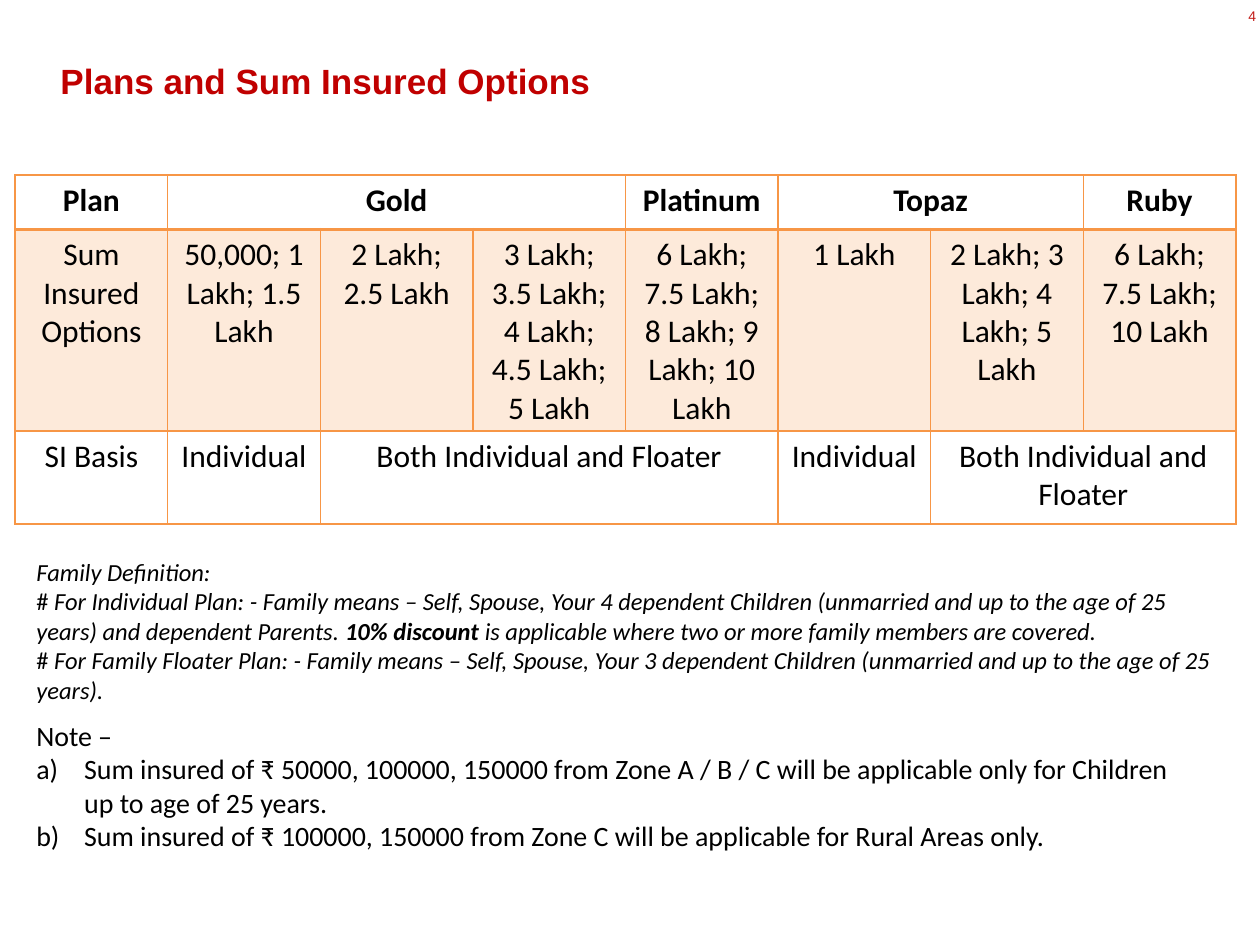
import pptx
import pptx.util
import pptx.dml.color
import pptx.enum.text
import pptx.oxml
import pptx.oxml.ns
from pptx.util import Inches

TITLE = "Plans and Sum Insured Options"
PAGE = "4"
PLANS = [
    [("Plan", 1), ("Gold", 3), ("Platinum", 1), ("Topaz", 2), ("Ruby", 1)],
    [("Sum Insured Options", 1), ("50,000; 1 Lakh; 1.5 Lakh", 1),
     ("2 Lakh; 2.5 Lakh", 1), ("3 Lakh; 3.5 Lakh; 4 Lakh; 4.5 Lakh; 5 Lakh", 1),
     ("6 Lakh; 7.5 Lakh; 8 Lakh; 9 Lakh; 10 Lakh", 1), ("1 Lakh", 1),
     ("2 Lakh; 3 Lakh; 4 Lakh; 5 Lakh", 1), ("6 Lakh; 7.5 Lakh; 10 Lakh", 1)],
    [("SI Basis", 1), ("Individual", 1), ("Both Individual and Floater", 3),
     ("Individual", 1), ("Both Individual and Floater", 2)],
]
ROW_HEIGHTS = [0.43, 1.6, 0.74]
COLUMNS = 8
FAMILY = [
    [("Family Definition:", "i")],
    [("# ", ""),
     ("For Individual Plan: - Family means – Self, Spouse, Your 4 dependent Children "
      "(unmarried and up to the age of 25 years) and dependent Parents. ", "i"),
     ("10% discount ", "bi"),
     ("is applicable where two or more family members are covered.", "i")],
    [("# ", ""),
     ("For Family Floater Plan: - Family means – Self, Spouse, Your 3 dependent Children "
      "(unmarried and up to the age of 25 years).", "i")],
]
NOTE_HEADING = "Note –"
NOTES = [
    "Sum insured of ₹ 50000, 100000, 150000 from Zone A / B / C will be applicable "
    "only for Children up to age of 25 years.",
    "Sum insured of ₹ 100000, 150000 from Zone C will be applicable for Rural Areas only.",
]
THEME = {
    "head_font": "Arial", "body_font": "Calibri",
    "title": "C00000", "page": "C21B17", "text": "000000",
    "border": "F79646", "band": "FDEADA",
    "title_size": 20, "page_size": 8, "table_size": 18, "family_size": 14, "note_size": 16,
}
ALIGN = pptx.enum.text.PP_ALIGN


def rgb(key):
    return pptx.dml.color.RGBColor.from_string(THEME[key])


def style(p, font, size, color, bold=None):
    p.font.name = THEME[font]
    p.font.size = pptx.util.Pt(THEME[size])
    p.font.color.rgb = rgb(color)
    p.font.bold = bold


def add_text(s, left, top, width, height):
    tf = s.shapes.add_textbox(*map(Inches, (left, top, width, height))).text_frame
    tf.word_wrap = True
    return tf


def next_paragraph(tf, index):
    return tf.paragraphs[0] if index == 0 else tf.add_paragraph()


def set_borders(cell, top, bottom):
    tc_pr = cell._tc.get_or_add_tcPr()
    for side, points in (("L", 1), ("R", 1), ("T", top), ("B", bottom)):
        tc_pr.append(pptx.oxml.parse_xml(
            f'<a:ln{side} {pptx.oxml.ns.nsdecls("a")} w="{pptx.util.Pt(points)}">'
            f'<a:solidFill><a:srgbClr val="{THEME["border"]}"/></a:solidFill></a:ln{side}>'))


def add_title(s):
    sp = s.shapes.title
    sp.left, sp.top, sp.width, sp.height = map(Inches, (0.38, 0.48, 9.17, 0.35))
    tf = sp.text_frame
    tf.text = TITLE
    tf.vertical_anchor = pptx.enum.text.MSO_ANCHOR.MIDDLE
    tf.auto_size = pptx.enum.text.MSO_AUTO_SIZE.NONE
    p = tf.paragraphs[0]
    p.alignment = ALIGN.LEFT
    p.line_spacing = pptx.util.Pt(22)
    style(p, "head_font", "title_size", "title", True)


def add_page_number(s):
    tf = add_text(s, 9.75, 0.06, 0.22, 0.19)
    tf.margin_left = tf.margin_right = tf.margin_top = tf.margin_bottom = 0
    tf.text = PAGE
    p = tf.paragraphs[0]
    p.alignment = ALIGN.RIGHT
    style(p, "head_font", "page_size", "page")


def add_plans(s):
    width = Inches(9.69)
    table = s.shapes.add_table(len(PLANS), COLUMNS, Inches(0.12), Inches(1.39),
                               width, Inches(sum(ROW_HEIGHTS))).table
    table.first_row = table.horz_banding = False
    for column in table.columns:
        column.width = width // COLUMNS
    for r, entries in enumerate(PLANS):
        table.rows[r].height = Inches(ROW_HEIGHTS[r])
        for c in range(COLUMNS):
            cell = table.cell(r, c)
            set_borders(cell, 2 if r == 1 else 1, 2 if r == 0 else 1)
            if r == 1:
                cell.fill.solid()
                cell.fill.fore_color.rgb = rgb("band")
            else:
                cell.fill.background()
        c = 0
        for text, span in entries:
            cell = table.cell(r, c)
            if span > 1:
                cell.merge(table.cell(r, c + span - 1))
            cell.text = text
            p = cell.text_frame.paragraphs[0]
            p.alignment = ALIGN.CENTER
            style(p, "body_font", "table_size", "text", r == 0)
            c += span


def add_family(s):
    tf = add_text(s, 0.19, 4.37, 9.62, 1.28)
    for i, runs in enumerate(FAMILY):
        p = next_paragraph(tf, i)
        style(p, "body_font", "family_size", "text")
        for text, marks in runs:
            r = p.add_run()
            r.text = text
            r.font.bold = "b" in marks
            r.font.italic = "i" in marks


def add_notes(s):
    tf = add_text(s, 0.19, 5.65, 9.46, 1.18)
    for i, text in enumerate([NOTE_HEADING] + NOTES):
        p = next_paragraph(tf, i)
        p.text = text
        if i > 0:
            p_pr = p._p.get_or_add_pPr()
            p_pr.set("marL", str(Inches(0.38)))
            p_pr.set("indent", str(-Inches(0.38)))
            p_pr.append(pptx.oxml.parse_xml(
                f'<a:buAutoNum {pptx.oxml.ns.nsdecls("a")} type="alphaLcParenR"/>'))
        style(p, "body_font", "note_size", "text")


def main():
    prs = pptx.Presentation()
    prs.slide_width, prs.slide_height = Inches(10), Inches(7.5)
    s = prs.slides.add_slide(prs.slide_layouts[5])
    add_page_number(s)
    add_title(s)
    add_family(s)
    add_plans(s)
    add_notes(s)
    prs.save("out.pptx")


if __name__ == "__main__":
    main()
